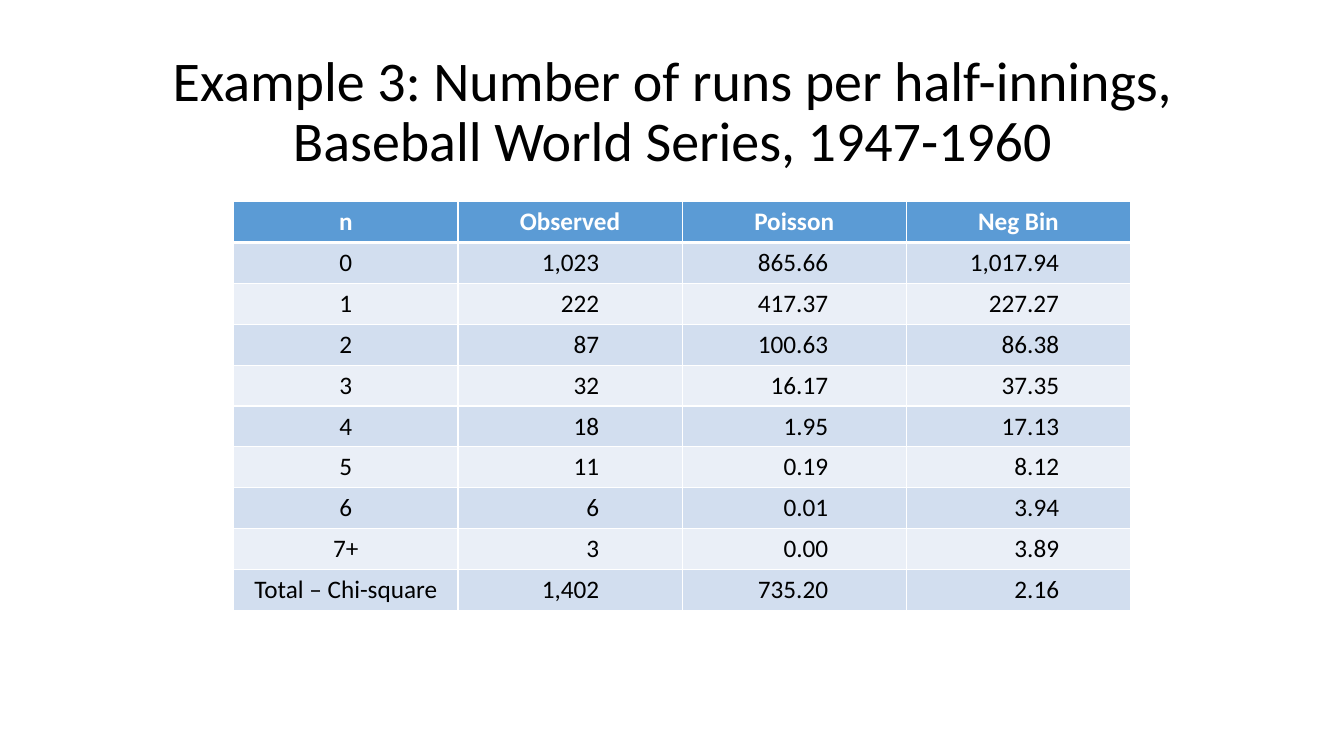
"""Build a slide comparing observed runs per half-inning with two fitted models."""
import lxml.etree
import pptx
import pptx.dml.color
import pptx.enum.text
import pptx.oxml.ns
import pptx.util
from pptx.util import Cm

BLACK = pptx.dml.color.RGBColor(0x00, 0x00, 0x00)
WHITE = pptx.dml.color.RGBColor(0xFF, 0xFF, 0xFF)
HEADER_BLUE = pptx.dml.color.RGBColor(0x5B, 0x9B, 0xD5)
DARK_BAND = pptx.dml.color.RGBColor(0xD2, 0xDE, 0xEF)
LIGHT_BAND = pptx.dml.color.RGBColor(0xEA, 0xEF, 0xF7)
FONT = "Calibri"
CENTER = pptx.enum.text.PP_ALIGN.CENTER
RIGHT = pptx.enum.text.PP_ALIGN.RIGHT

TITLE = "Example 3: Number of runs per half-innings, Baseball World Series, 1947-1960"
RUNS = [
    ("n", "Observed", "Poisson", "Neg Bin"),
    ("0", "1,023", "865.66", "1,017.94"),
    ("1", "222", "417.37", "227.27"),
    ("2", "87", "100.63", "86.38"),
    ("3", "32", "16.17", "37.35"),
    ("4", "18", "1.95", "17.13"),
    ("5", "11", "0.19", "8.12"),
    ("6", "6", "0.01", "3.94"),
    ("7+", "3", "0.00", "3.89"),
    ("Total – Chi-square", "1,402", "735.20", "2.16"),
]
NUMBER_MARGINS = {1: Cm(2.09), 2: Cm(1.97), 3: Cm(1.8)}
COLUMN_WIDTH = Cm(5.65)
ROW_HEIGHT = Cm(1.03)


def format_paragraph(paragraph, size, color, alignment, bold=False):
    paragraph.alignment = alignment
    paragraph.font.name = FONT
    paragraph.font.size = pptx.util.Pt(size)
    paragraph.font.color.rgb = color
    paragraph.font.bold = bold


def set_title(slide):
    title = slide.shapes.title
    title.left, title.top = Cm(2.34), Cm(1.02)
    title.width, title.height = Cm(29.21), Cm(3.68)
    title.text_frame.text = TITLE
    title.text_frame.vertical_anchor = pptx.enum.text.MSO_ANCHOR.MIDDLE
    title.text_frame.auto_size = pptx.enum.text.MSO_AUTO_SIZE.NONE
    heading = title.text_frame.paragraphs[0]
    format_paragraph(heading, 40, BLACK, CENTER)
    heading.line_spacing = 0.9


def set_borders(cell, top, bottom):
    properties = cell._tc.get_or_add_tcPr()
    for side, points in (("L", 1), ("R", 1), ("T", top), ("B", bottom)):
        border = lxml.etree.SubElement(
            properties, pptx.oxml.ns.qn(f"a:ln{side}"), w=str(pptx.util.Pt(points)))
        fill = lxml.etree.SubElement(border, pptx.oxml.ns.qn("a:solidFill"))
        lxml.etree.SubElement(fill, pptx.oxml.ns.qn("a:srgbClr"), val=str(WHITE))


def fill_cell(cell, text, row, column):
    is_header = row == 0
    set_borders(cell, top=3 if row == 1 else 1, bottom=3 if is_header else 1)
    cell.fill.solid()
    band = DARK_BAND if row % 2 else LIGHT_BAND
    cell.fill.fore_color.rgb = HEADER_BLUE if is_header else band
    cell.text = text
    is_number = not is_header and column in NUMBER_MARGINS
    if is_number:
        cell.margin_right = NUMBER_MARGINS[column]
    format_paragraph(cell.text_frame.paragraphs[0], 18,
                     WHITE if is_header else BLACK,
                     RIGHT if is_number else CENTER, bold=is_header)


def add_runs_table(slide):
    row_count, column_count = len(RUNS), len(RUNS[0])
    runs_table = slide.shapes.add_table(
        row_count, column_count, Cm(5.89), Cm(5.08),
        COLUMN_WIDTH * column_count, ROW_HEIGHT * row_count).table
    for column in runs_table.columns:
        column.width = COLUMN_WIDTH
    for row, values in enumerate(RUNS):
        runs_table.rows[row].height = ROW_HEIGHT
        for column, text in enumerate(values):
            fill_cell(runs_table.cell(row, column), text, row, column)


def main():
    presentation = pptx.Presentation()
    presentation.slide_width, presentation.slide_height = Cm(33.87), Cm(19.05)
    slide = presentation.slides.add_slide(presentation.slide_layouts[5])
    set_title(slide)
    add_runs_table(slide)
    presentation.save("out.pptx")


if __name__ == "__main__":
    main()
